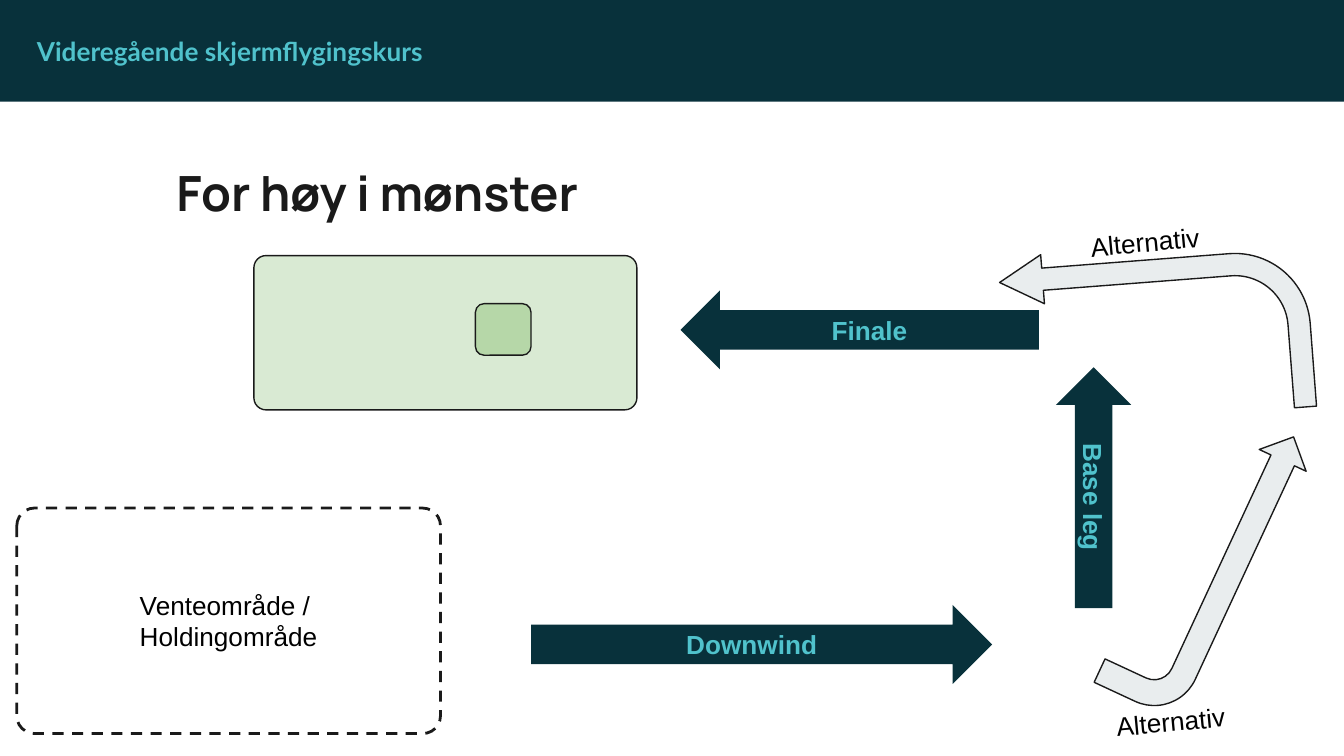
from dataclasses import dataclass

from pptx import Presentation
from pptx.dml.color import RGBColor
from pptx.enum.dml import MSO_LINE
from pptx.enum.shapes import MSO_SHAPE
from pptx.enum.text import MSO_ANCHOR, PP_ALIGN
from pptx.util import Pt


@dataclass(frozen=True)
class Theme:
    navy: str = "08313B"
    teal: str = "50C2CC"
    ink: str = "1A1A1A"
    black: str = "000000"
    field: str = "D9EAD3"
    target: str = "B6D7A8"
    mist: str = "E9EDEE"
    body_font: str = "Arial"
    header_font: str = "Lato"
    title_font: str = "Manrope"
    body_size: float = 14
    title_size: float = 26
    thin: float = 0.75
    thick: float = 1.5
    inset: float = 7.2
    corner: float = 0.079


THEME = Theme()


@dataclass(frozen=True)
class Box:
    left: float
    top: float
    width: float
    height: float

    def inside(self, left, top, width, height):
        return Box(self.left + left, self.top + top, width, height)

    def lengths(self):
        return [Pt(v) for v in (self.left, self.top, self.width, self.height)]


def write(shape, lines, color, font=THEME.body_font, size=THEME.body_size,
          bold=False, align=PP_ALIGN.CENTER, anchor=MSO_ANCHOR.MIDDLE):
    frame = shape.text_frame
    frame.word_wrap = True
    frame.vertical_anchor = anchor
    frame.margin_left = frame.margin_right = Pt(THEME.inset)
    frame.margin_top = frame.margin_bottom = Pt(THEME.inset)
    frame.text = "\n".join(lines)
    for paragraph in frame.paragraphs:
        paragraph.alignment = align
        paragraph.font.name = font
        paragraph.font.size = Pt(size)
        paragraph.font.bold = bold
        paragraph.font.color.rgb = RGBColor.from_string(color)


def add_figure(slide, preset, box, fill=None, line_width=None,
               adjustments=(), rotation=0, flipped=False):
    figure = slide.shapes.add_shape(preset, *box.lengths())
    figure.shadow.inherit = False
    figure.rotation = rotation
    for index, value in enumerate(adjustments):
        figure.adjustments[index] = value
    if fill:
        figure.fill.solid()
        figure.fill.fore_color.rgb = RGBColor.from_string(fill)
    else:
        figure.fill.background()
    if line_width:
        figure.line.color.rgb = RGBColor.from_string(THEME.ink)
        figure.line.width = Pt(line_width)
    else:
        figure.line.fill.background()
    if flipped:
        figure.element.spPr.xfrm.set("flipH", "1")
    return figure


def add_label(slide, box, text, color, rotation=0, **style):
    label = slide.shapes.add_textbox(*box.lengths())
    label.rotation = rotation
    write(label, [text], color, anchor=MSO_ANCHOR.TOP, **style)


def add_header(slide, box):
    add_figure(slide, MSO_SHAPE.RECTANGLE, box, THEME.navy)
    add_label(slide, box.inside(12.7, 11.5, 235, 31.7),
              "Videregående skjermflygingskurs", THEME.teal,
              font=THEME.header_font, bold=True, align=PP_ALIGN.LEFT)


def add_title(slide, box):
    add_label(slide, box, "For høy i mønster", THEME.ink, font=THEME.title_font,
              size=THEME.title_size, bold=True, align=PP_ALIGN.LEFT)


def add_landing_field(slide, box):
    add_figure(slide, MSO_SHAPE.ROUNDED_RECTANGLE, box, THEME.field,
               THEME.thin, [THEME.corner])
    add_figure(slide, MSO_SHAPE.FLOWCHART_ALTERNATE_PROCESS,
               box.inside(118.7, 25.8, 29.8, 27.6), THEME.target, THEME.thin)


def add_holding_area(slide, box):
    area = add_figure(slide, MSO_SHAPE.ROUNDED_RECTANGLE, box,
                      line_width=THEME.thick, adjustments=[THEME.corner])
    area.line.dash_style = MSO_LINE.DASH
    write(area, ["Venteområde / ", "Holdingområde"], THEME.black)


def add_circuit(slide, box):
    legs = [
        ("Downwind", box.inside(0, 168.5, 247, 42.3), 0, False),
        ("Finale", box.inside(80.1, 0, 192, 42.3), 0, True),
        ("Base leg", box.inside(236.9, 85.5, 129, 40.3), 90, True),
    ]
    for name, leg_box, rotation, flipped in legs:
        leg = add_figure(slide, MSO_SHAPE.RIGHT_ARROW, leg_box, THEME.navy,
                         adjustments=[0.5, 0.5], rotation=rotation,
                         flipped=flipped)
        write(leg, [name], THEME.teal, bold=True)


def add_alternatives(slide, box):
    routes = [
        (box.inside(26, 143.2, 164.2, 55.4), 114.9, [0.25, 0.25, 0.25, 0.438]),
        (box.inside(0, 0, 164.2, 92.2), 355.6, [0.129, 0.143, 0.25, 0.438]),
    ]
    for route_box, rotation, adjustments in routes:
        add_figure(slide, MSO_SHAPE.BENT_ARROW, route_box, THEME.mist,
                   THEME.thin, adjustments, rotation, flipped=True)
    for left, top in [(29.6, -18), (43.4, 239)]:
        add_label(slide, box.inside(left, top, 92, 31.7), "Alternativ",
                  THEME.black, rotation=354.5)


def main():
    presentation = Presentation()
    presentation.slide_width = Pt(720)
    presentation.slide_height = Pt(405)
    slide = presentation.slides.add_slide(presentation.slide_layouts[6])
    add_header(slide, Box(0, 0, 720, 54.5))
    add_title(slide, Box(87.4, 80, 605.5, 42.5))
    add_landing_field(slide, Box(136, 136.9, 205.2, 82.7))
    add_holding_area(slide, Box(9, 272.2, 227, 120.8))
    add_circuit(slide, Box(284.5, 155.6, 366, 210.8))
    add_alternatives(slide, Box(537.8, 131.8, 190.2, 270.7))
    presentation.save("out.pptx")


if __name__ == "__main__":
    main()
